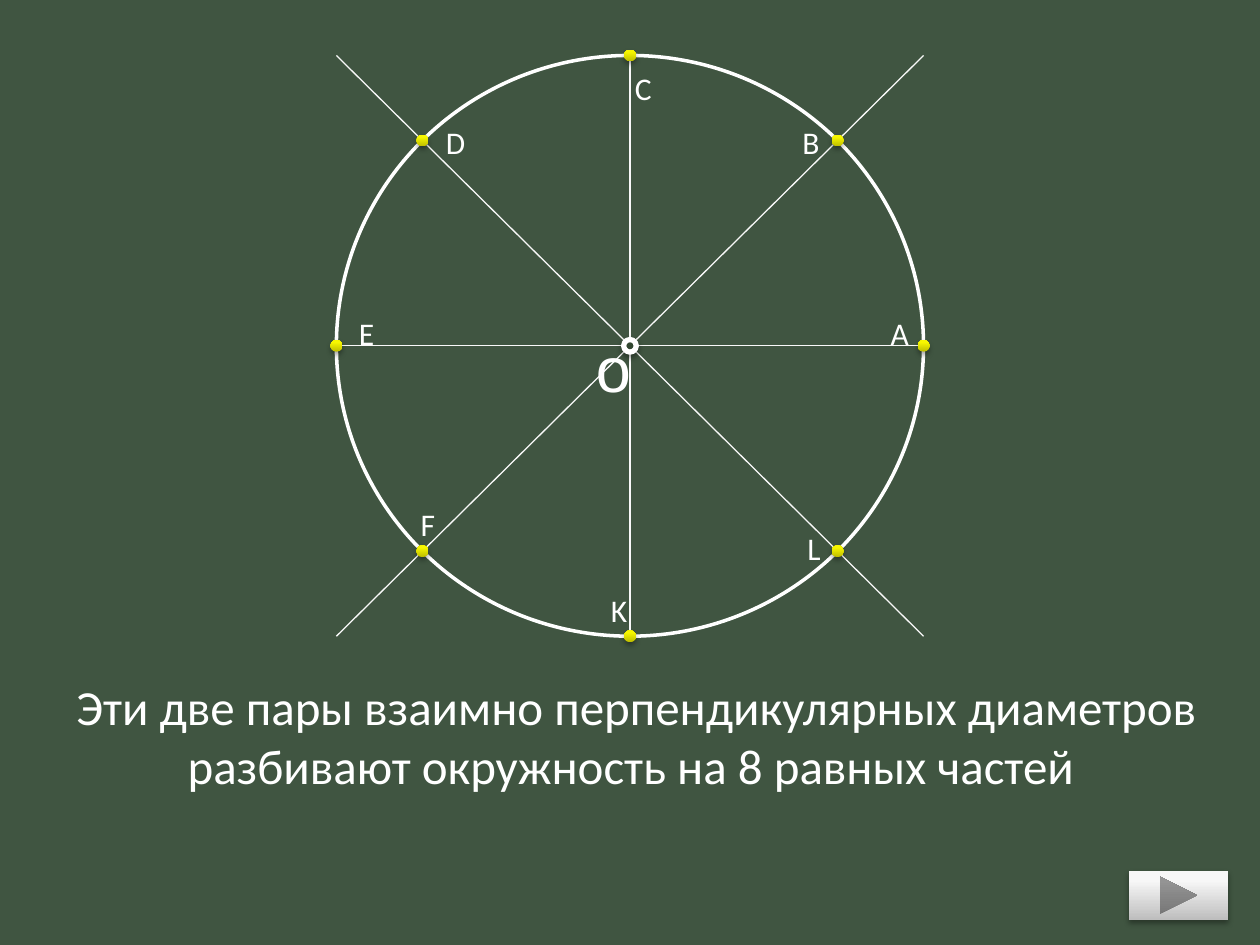
"""Builds a slide with a circle split into eight equal parts by four diameters."""
import itertools
import math
import pptx
import pptx.dml.color
import pptx.enum.shapes
import pptx.enum.text
import pptx.oxml.ns
import pptx.util
from lxml import etree

prs = pptx.Presentation()
prs.slide_width = pptx.util.Inches(10)
prs.slide_height = pptx.util.Inches(7.5)
W, H = prs.slide_width / 100, prs.slide_height / 100
qn = pptx.oxml.ns.qn
Pt = pptx.util.Pt
SHAPE = pptx.enum.shapes.MSO_SHAPE


def rgb(value):
    return pptx.dml.color.RGBColor.from_string(value)


def place(x, y, w, h):
    return [pptx.util.Emu(round(v)) for v in (x * W, y * H, w * W, h * H)]


slide = prs.slides.add_slide(prs.slide_layouts[1])
slide.background.fill.solid()
slide.background.fill.fore_color.rgb = rgb("405541")
title = slide.shapes.title._element
title.getparent().remove(title)

body = slide.placeholders[1]
body.left, body.top, body.width, body.height = place(2.2, 70.93, 95.7, 14.53)
tf = body.text_frame
tf.auto_size = pptx.enum.text.MSO_AUTO_SIZE.NONE
p = tf.paragraphs[0]
p.alignment = pptx.enum.text.PP_ALIGN.CENTER
pPr = p._p.get_or_add_pPr()
pPr.set("marL", "0")
pPr.set("indent", "0")
etree.SubElement(pPr, qn("a:buNone"))
r = p.add_run()
r.text = " Эти две пары взаимно перпендикулярных диаметров разбивают окружность на 8 равных частей"
r.font.size = Pt(28)
r.font.name = "Calibri"
r.font.color.rgb = rgb("FFFFFF")

cx, cy, rx, ry = 50, 36.6, 23.3, 30.73
circle = slide.shapes.add_shape(SHAPE.OVAL, *place(cx - rx, cy - ry, 2 * rx, 2 * ry))
circle.shadow.inherit = False
circle.fill.background()
circle.line.color.rgb = rgb("FFFFFF")
circle.line.width = Pt(2)

diameters = [(-1, 0, 1, 0), (0, -1, 0, 1), (-1, -1, 0, 0), (0, 0, 1, 1), (1, -1, -1, 1)]
for x1, y1, x2, y2 in diameters:
    ends = place(cx + x1 * rx, cy + y1 * ry, cx + x2 * rx, cy + y2 * ry)
    line = slide.shapes.add_connector(pptx.enum.shapes.MSO_CONNECTOR.STRAIGHT, *ends)
    line.line.color.rgb = rgb("F9F9F9")
    line.line.width = Pt(0.75)
    etree.SubElement(line._element.spPr, qn("a:effectLst"))

dot_w, dot_h = 0.94, 1.25
yellow = ["BEBE00", "F7F700", "F8F800"]
grey = ["BEBEBE", "F7F7F7", "F8F8F8"]
raised = []
for step in range(8):
    angle = step * math.pi / 4
    x, y = cx + rx * math.cos(angle), cy - ry * math.sin(angle)
    raised.append((SHAPE.OVAL, (x - dot_w / 2, y - dot_h / 2, dot_w, dot_h), yellow))
raised.append((SHAPE.ACTION_BUTTON_FORWARD_OR_NEXT, (89.6, 92.13, 7.9, 5.2), grey))
raised.append((SHAPE.OVAL, (cx - 0.5, cy - 0.67, 1, 1.33), None))

for kind, box, colours in raised:
    sp = slide.shapes.add_shape(kind, *place(*box))
    if colours:
        sp.fill.gradient()
        sp.fill.gradient_angle = 90
        stops = sp._element.spPr.find(".//" + qn("a:gsLst"))
        for stop in list(stops):
            stops.remove(stop)
        for pos, colour in zip((0, 80, 100), colours):
            stop = etree.SubElement(stops, qn("a:gs"), pos=str(pos * 1000))
            etree.SubElement(stop, qn("a:srgbClr"), val=colour)
        sp.line.fill.background()
    else:
        sp.fill.solid()
        sp.fill.fore_color.rgb = rgb("314630")
        sp.line.color.rgb = rgb("FFFFFF")
        sp.line.width = Pt(3)
    sp.shadow.inherit = False
    effects = sp._element.spPr.find(qn("a:effectLst"))
    shadow = etree.SubElement(effects, qn("a:outerShdw"), blurRad=str(Pt(3.1)),
                              dist=str(Pt(1.8)), dir="5400000", rotWithShape="0")
    black = etree.SubElement(shadow, qn("a:srgbClr"), val="000000")
    etree.SubElement(black, qn("a:alpha"), val="35000")

points = [("А", 69.7, 32.53, 3.8), ("B", 62.7, 12.4, 3.7), ("C", 49.4, 6.67, 3.8),
          ("D", 34.4, 12.4, 3.8), ("E", 27.5, 32.53, 3.7), ("F", 32.4, 52.8, 3.6),
          ("K", 47.5, 61.87, 5.7), ("L", 63.1, 55.33, 3.4)]
labels = [(point, 5.33, 18, "Calibri") for point in points]
labels.append((("о", 46.3, 34.27, 4.8), 9.47, 36, "Arial"))
for (text, x, y, w), h, size, font in labels:
    tf = slide.shapes.add_textbox(*place(x, y, w, h)).text_frame
    tf.word_wrap = text in "АK"
    tf.auto_size = pptx.enum.text.MSO_AUTO_SIZE.SHAPE_TO_FIT_TEXT
    r = tf.paragraphs[0].add_run()
    r.text = text
    r.font.size = Pt(size)
    r.font.name = font
    r.font.color.rgb = rgb("FFFFFF")

prs.save("out.pptx")
